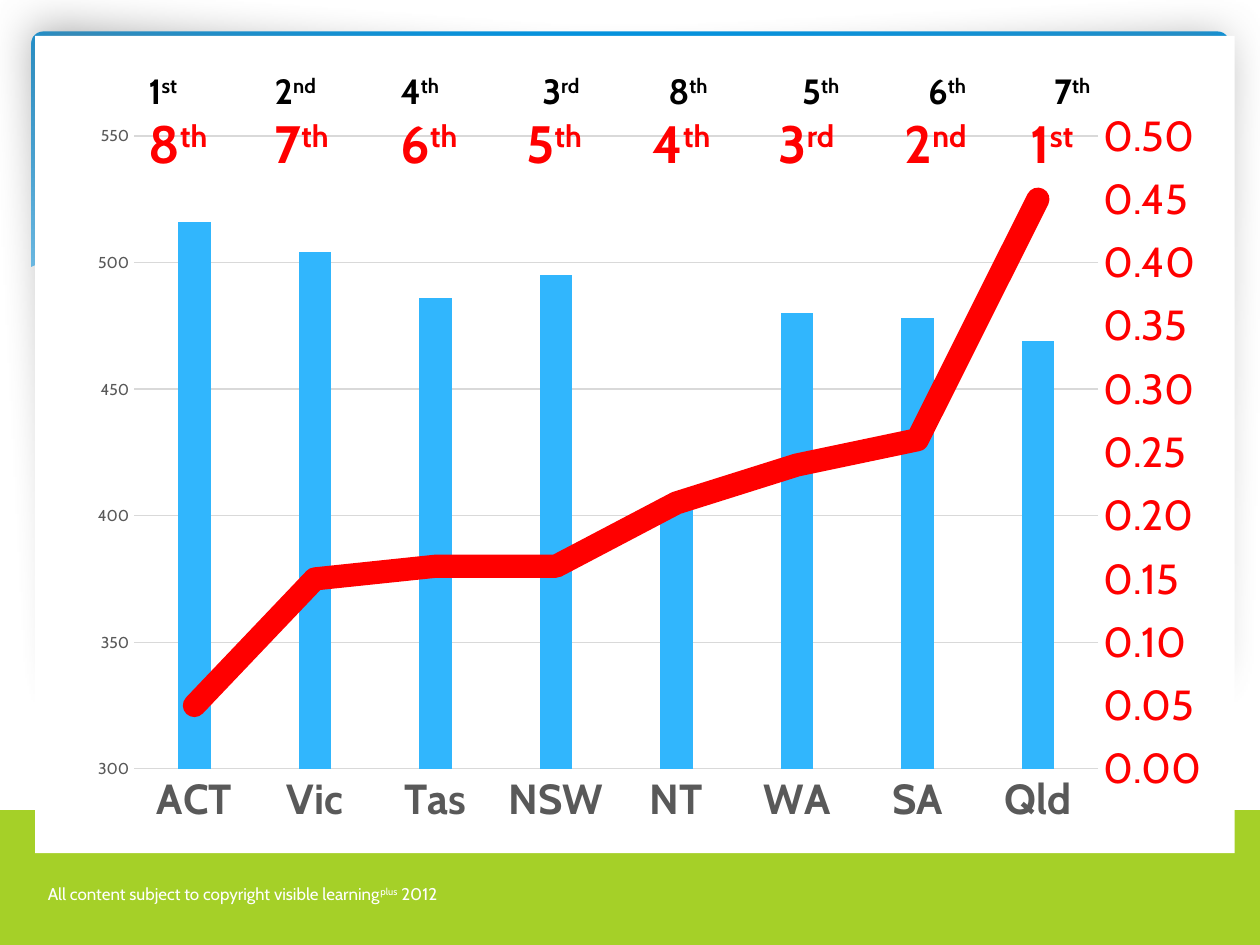
import copy

import lxml.etree
import pptx
import pptx.chart.axis
import pptx.chart.data
import pptx.dml.color
import pptx.enum.chart
import pptx.enum.shapes
import pptx.oxml
import pptx.oxml.ns
import pptx.util

Pt = pptx.util.Pt
qn = pptx.oxml.ns.qn
FONT = "Cabin"
COLORS = {
    "white": "FFFFFF", "black": "000000", "green": "A5D028", "shade": "808080",
    "sky": "0293E0", "pale": "83D3FE", "bar": "31B6FD", "red": "FF0000",
    "label": "595959", "grid": "D9D9D9",
}
WAVE = [
    (703, 177), (684, 184), (655, 191), (621, 197), (582, 199), (548, 198),
    (510, 194), (467, 186), (417, 176), (362, 163), (301, 149), (245, 140),
    (195, 135), (151, 132), (105, 133), (68, 138), (42, 143), (26, 149),
    (17, 153), (17, 237), (703, 237),
]
SHADOW = [(15, 428), (-8, -12), (353, 14), (726, -5), (717, 420), (336, 330)]
STATES = ["ACT", "Vic", "Tas", "NSW", "NT", "WA", "SA", "Qld"]
SCORES = [516, 504, 486, 495, 403, 480, 478, 469]
EFFECTS = [0.05, 0.15, 0.16, 0.16, 0.21, 0.24, 0.26, 0.45]
SCORE_RANKS = [1, 2, 4, 3, 8, 5, 6, 7]
EFFECT_RANKS = [8, 7, 6, 5, 4, 3, 2, 1]
SCORE_TABS = [72, 144, 225, 297, 373.5, 445.5, 517.5]
EFFECT_TABS = [72 * i for i in range(1, 8)]


def rgb(name):
    return pptx.dml.color.RGBColor.from_string(COLORS[name])


def paint(sp, color):
    sp.shadow.inherit = False
    sp.fill.solid()
    sp.fill.fore_color.rgb = rgb(color)
    sp.line.fill.background()


def add_box(s, kind, color, *box):
    sp = s.shapes.add_shape(kind, *map(Pt, box))
    paint(sp, color)
    return sp


def add_outline(s, points, color):
    points = [(Pt(x), Pt(y)) for x, y in points]
    builder = s.shapes.build_freeform(*points[0], scale=1.0)
    builder.add_line_segments(points[1:], close=True)
    sp = builder.convert_to_shape()
    paint(sp, color)
    return sp


def soften(sp, alpha, radius):
    """Make a solid fill partly transparent and blur its edge."""
    color = sp._element.spPr.find(".//" + qn("a:srgbClr"))
    lxml.etree.SubElement(color, qn("a:alpha"), val=str(alpha * 1000))
    effects = sp._element.spPr.find(qn("a:effectLst"))
    lxml.etree.SubElement(effects, qn("a:softEdge"), rad=str(Pt(radius)))


def add_text_frame(s, *box):
    tf = s.shapes.add_textbox(*map(Pt, box)).text_frame
    tf.word_wrap = True
    return tf


def add_run(p, text, raised=False):
    r = p.add_run()
    r.text = text
    if raised:
        r.font._element.set("baseline", "30000")


def style(font, size, color, bold=False):
    font.name = FONT
    font.size = Pt(size)
    font.bold = bold
    font.color.rgb = rgb(color)


def fill_ranks(p, ranks, tabs, size, color):
    """Write ordinals with raised endings, one per tab stop."""
    tab_list = lxml.etree.SubElement(p._p.get_or_add_pPr(), qn("a:tabLst"))
    for pos in tabs:
        lxml.etree.SubElement(tab_list, qn("a:tab"), pos=str(Pt(pos)), algn="l")
    style(p.font, size, color, True)
    for i, rank in enumerate(ranks):
        add_run(p, ("\t" if i else "") + str(rank))
        add_run(p, {1: "st", 2: "nd", 3: "rd"}.get(rank, "th"), True)


def set_plot_box(plot_area, x, y, w, h):
    for old in plot_area.findall(qn("c:layout")):
        plot_area.remove(old)
    layout = plot_area.makeelement(qn("c:layout"))
    plot_area.insert(0, layout)
    manual = lxml.etree.SubElement(layout, qn("c:manualLayout"))
    for tag, val in (("layoutTarget", "inner"), ("xMode", "edge"), ("yMode", "edge"),
                     ("x", x), ("y", y), ("w", w), ("h", h)):
        lxml.etree.SubElement(manual, qn("c:" + tag), val=str(val))


def move_to_right_axis(chart):
    """Turn the second column series into a line and return its value axis."""
    area = chart._chartSpace.chart.plotArea
    bars = area.find(qn("c:barChart"))
    ser = bars.findall(qn("c:ser"))[1]
    for old in ser.findall(qn("c:invertIfNegative")):
        ser.remove(old)
    line = pptx.oxml.parse_xml(
        '<c:lineChart %s><c:grouping val="standard"/><c:varyColors val="0"/>'
        '<c:marker val="1"/><c:axId val="5001"/><c:axId val="5002"/></c:lineChart>'
        % pptx.oxml.ns.nsdecls("c"))
    line.insert(2, ser)
    bars.addnext(line)
    axes = {}
    for tag, own, other in (("c:valAx", "5002", "5001"), ("c:catAx", "5001", "5002")):
        ax = copy.deepcopy(area.find(qn(tag)))
        ax.find(qn("c:axId")).set("val", own)
        ax.find(qn("c:crossAx")).set("val", other)
        area.findall(qn("c:valAx"))[-1].addnext(ax)
        axes[tag] = ax
    axes["c:catAx"].find(qn("c:delete")).set("val", "1")
    axes["c:valAx"].find(qn("c:axPos")).set("val", "r")
    axes["c:valAx"].find(qn("c:crosses")).set("val", "max")
    return pptx.chart.axis.ValueAxis(axes["c:valAx"])


def format_axis(ax, size, color, bold=False):
    ax.major_tick_mark = ax.minor_tick_mark = pptx.enum.chart.XL_TICK_MARK.NONE
    style(ax.tick_labels.font, size, color, bold)
    ax.format.line.fill.background()


def format_scale(ax, low, high, step, number_format):
    ax.minimum_scale, ax.maximum_scale, ax.major_unit = low, high, step
    ax.tick_labels.number_format = number_format
    ax.tick_labels.number_format_is_linked = False


def draw_hairline(line):
    line.color.rgb = rgb("grid")
    line.width = Pt(0.75)


def add_state_chart(s, *box):
    data = pptx.chart.data.CategoryChartData()
    data.categories = STATES
    data.add_series("Series 1", SCORES, number_format="0")
    data.add_series("Series 2", EFFECTS, number_format="0.00")
    kind = pptx.enum.chart.XL_CHART_TYPE.COLUMN_CLUSTERED
    chart = s.shapes.add_chart(kind, *map(Pt, box), data).chart
    chart.has_legend = chart.has_title = False
    style(chart.font, 10, "black")
    left = chart.value_axis
    right = move_to_right_axis(chart)
    set_plot_box(chart._chartSpace.chart.plotArea, 0.052, 0.054, 0.838, 0.85)

    format_axis(chart.category_axis, 24, "label", True)
    draw_hairline(chart.category_axis.format.line)
    format_axis(left, 9, "label")
    format_scale(left, 300, 550, 50, "0")
    draw_hairline(left.major_gridlines.format.line)
    format_axis(right, 24, "red")
    format_scale(right, 0, 0.5, 0.05, "0.00")
    right.has_major_gridlines = False

    columns, trend = chart.plots
    columns.gap_width = 269
    columns.vary_by_categories = False
    fill = columns.series[0].format.fill
    fill.solid()
    fill.fore_color.rgb = rgb("bar")
    ser = trend.series[0]
    ser.smooth = False
    ser.marker.style = pptx.enum.chart.XL_MARKER_STYLE.NONE
    ser.format.line.color.rgb = rgb("red")
    ser.format.line.width = Pt(13.25)
    ln = ser._element.find(qn("c:spPr")).find(qn("a:ln"))
    ln.set("cap", "rnd")
    lxml.etree.SubElement(ln, qn("a:round"))


def add_backdrop(s):
    shapes = pptx.enum.shapes.MSO_SHAPE
    panel = add_box(s, shapes.ROUNDED_RECTANGLE, "sky", 18, 18, 684.5, 194.5)
    panel.adjustments[0] = 0.034
    panel.fill.gradient()
    panel.fill.gradient_angle = 270
    for stop, pos, color in zip(panel.fill.gradient_stops, (0, 0.9), ("sky", "pale")):
        stop.position = pos
        stop.color.rgb = rgb(color)
    add_outline(s, WAVE, "white")
    add_box(s, shapes.RECTANGLE, "green", 0, 463, 720, 77)
    soften(add_outline(s, SHADOW, "shade"), 70, 25)
    add_box(s, shapes.RECTANGLE, "white", 20, 20.5, 685.5, 467)


def main():
    prs = pptx.Presentation()
    prs.slide_width, prs.slide_height = Pt(720), Pt(540)
    s = prs.slides.add_slide(prs.slide_layouts[6])
    add_backdrop(s)
    p = add_text_frame(s, 20.2, 501.5, 408, 19).paragraphs[0]
    style(p.font, 9.7, "white")
    add_run(p, "All content subject to copyright visible learning")
    add_run(p, "plus", True)
    add_run(p, " 2012")
    add_state_chart(s, 42.5, 54.7, 657.4, 425.5)
    tf = add_text_frame(s, 77.8, 36, 594, 48)
    fill_ranks(tf.paragraphs[0], SCORE_RANKS, SCORE_TABS, 20, "black")
    fill_ranks(tf.add_paragraph(), EFFECT_RANKS, EFFECT_TABS, 30, "red")
    prs.save("out.pptx")


if __name__ == "__main__":
    main()
